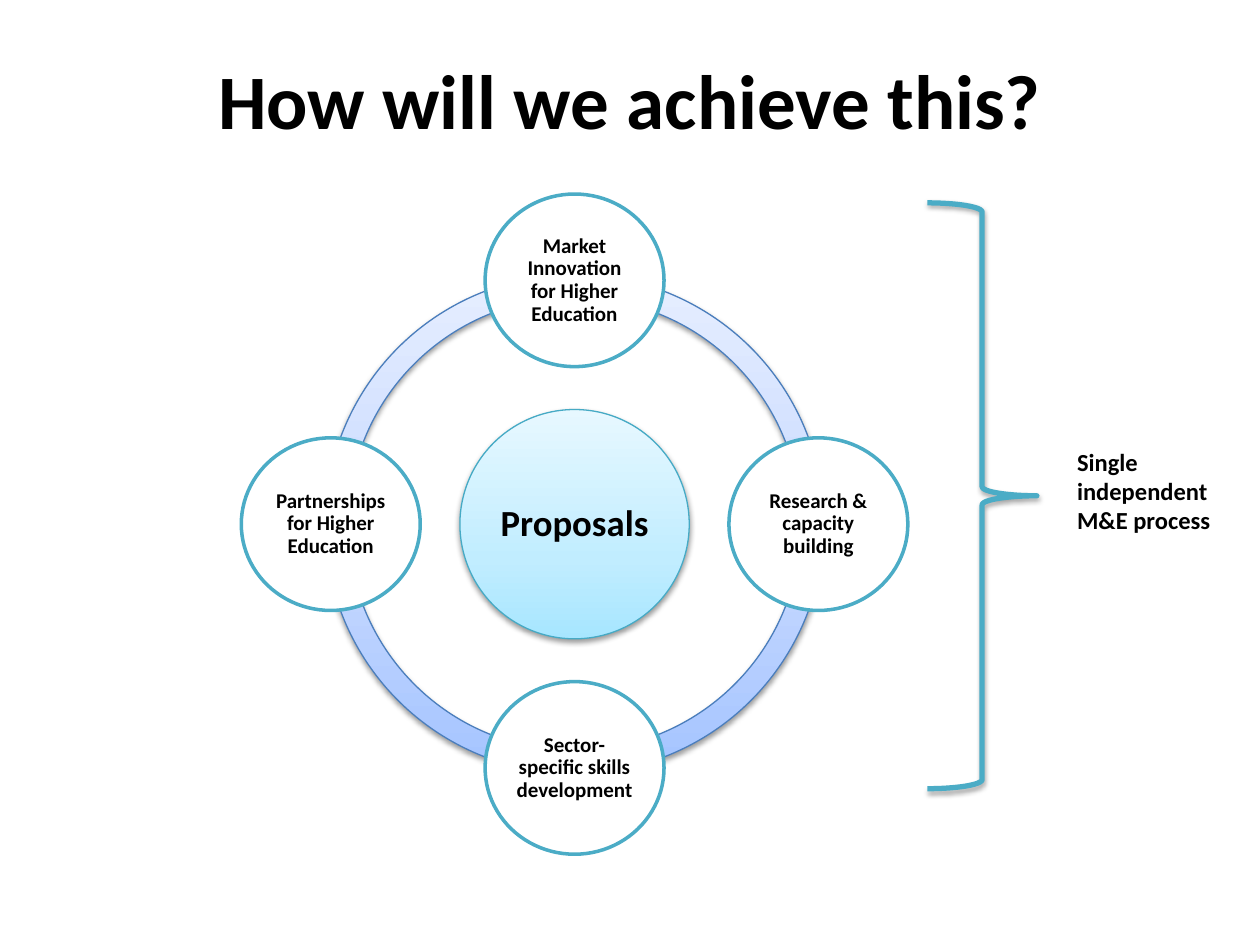
from copy import deepcopy

from lxml import etree
from pptx import Presentation
from pptx import util as u
from pptx.dml import color
from pptx.enum import shapes, text
from pptx.oxml import ns

THEME = dict(
    font="Calibri", ink="000000", white="FFFFFF", accent="4BACC6",
    ring=("A4C4FF", "BFD4FF", "E6EEFF"), ring_line="4B7EBC",
    hub=("A7E6FF", "C1EDFF", "E7F8FF"), hub_line="46AAC5",
    title=44, hub_size=21, node_size=12, side_size=14,
)
rgb = color.RGBColor.from_string
CENTER = text.PP_ALIGN.CENTER


def write(sp, lines, size, align, inset=None, spacing=None):
    tf = sp.text_frame
    frame = dict(word_wrap=True, vertical_anchor=text.MSO_ANCHOR.MIDDLE)
    if inset is not None:
        for side in ("left", "top", "right", "bottom"):
            frame[f"margin_{side}"] = u.Inches(inset)
    for name, value in frame.items():
        setattr(tf, name, value)
    for i, line in enumerate(lines):
        p = tf.paragraphs[0] if i == 0 else tf.add_paragraph()
        p.alignment, p.line_spacing = align, spacing
        r = p.add_run()
        r.text = line
        for name, value in dict(name=THEME["font"], size=u.Pt(size), bold=True).items():
            setattr(r.font, name, value)
        r.font.color.rgb = rgb(THEME["ink"])


def draw(kind, box, fill, line, width, shadow=None):
    """Add a shape; fill is None, a colour or three gradient colours, shadow an opacity in %."""
    sp = s.shapes.add_shape(kind, *map(u.Inches, box))
    sp.line.color.rgb, sp.line.width = rgb(line), u.Pt(width)
    if fill is None:
        sp.fill.background()
    elif isinstance(fill, str):
        sp.fill.solid()
        sp.fill.fore_color.rgb = rgb(fill)
    else:
        sp.fill.gradient()
        sp.fill.gradient_angle = 90
        stops = sp._element.spPr.find(".//" + ns.qn("a:gsLst"))
        stops.insert(1, deepcopy(stops[0]))
        for stop, pos, shade in zip(sp.fill.gradient_stops, (0, 0.35, 1), fill):
            stop.position, stop.color.rgb = pos, rgb(shade)
    sp.shadow.inherit = False
    if shadow:
        effects = sp._element.spPr.find(ns.qn("a:effectLst"))
        outer = etree.SubElement(effects, ns.qn("a:outerShdw"), blurRad=str(u.Pt(3.1)),
                                 dist=str(u.Pt(1.6)), dir="5400000", rotWithShape="0")
        shade = etree.SubElement(outer, ns.qn("a:srgbClr"), val=THEME["ink"])
        etree.SubElement(shade, ns.qn("a:alpha"), val=str(shadow * 1000))
    return sp


prs = Presentation()
prs.slide_width, prs.slide_height = u.Inches(10), u.Inches(7.5)
s = prs.slides.add_slide(prs.slide_layouts[5])

title = s.shapes.title
title.left, title.top, title.width, title.height = map(u.Inches, (0.5, 0.16, 9, 1.25))
write(title, ["How will we achieve this?"], THEME["title"], CENTER)

# Ring of four quarter arcs; arc angles count 27 units to a quarter turn in steps of 54
cx, cy = 4.56, 4.16
ring, hub, orbit = 3.96, 1.82, 1.935
for start, end in ((108, 162), (54, 108), (0, 54), (162, 0)):
    arc = draw(shapes.MSO_SHAPE.BLOCK_ARC, (cx - ring / 2, cy - ring / 2, ring, ring),
               THEME["ring"], THEME["ring_line"], 0.75, 38)
    for i, value in enumerate((start, end, 0.046)):
        arc.adjustments[i] = value

sp = draw(shapes.MSO_SHAPE.OVAL, (cx - hub / 2, cy - hub / 2, hub, hub),
          THEME["hub"], THEME["hub_line"], 0.75, 38)
write(sp, ["Proposals"], THEME["hub_size"], CENTER, 0.03, 0.9)

node_w, node_h = 1.42, 1.37
nodes = [
    (0, -1, "Market Innovation for Higher Education"),
    (1, 0, "Research & capacity building"),
    (0, 1, "Sector-specific skills development"),
    (-1, 0, "Partnerships for Higher Education"),
]
for dx, dy, label in nodes:
    box = (cx + dx * orbit - node_w / 2, cy + dy * orbit - node_h / 2, node_w, node_h)
    sp = draw(shapes.MSO_SHAPE.OVAL, box, THEME["white"], THEME["accent"], 2)
    write(sp, [label], THEME["node_size"], CENTER, 0.02, 0.9)

draw(shapes.MSO_SHAPE.RIGHT_BRACE, (7.36, 1.61, 0.87, 4.65), None, THEME["accent"], 3, 35)

side = s.shapes.add_textbox(*map(u.Inches, (8.45, 3.44, 1.5, 0.91)))
write(side, ["Single", "independent", "M&E process"], THEME["side_size"], text.PP_ALIGN.LEFT)

prs.save("out.pptx")
